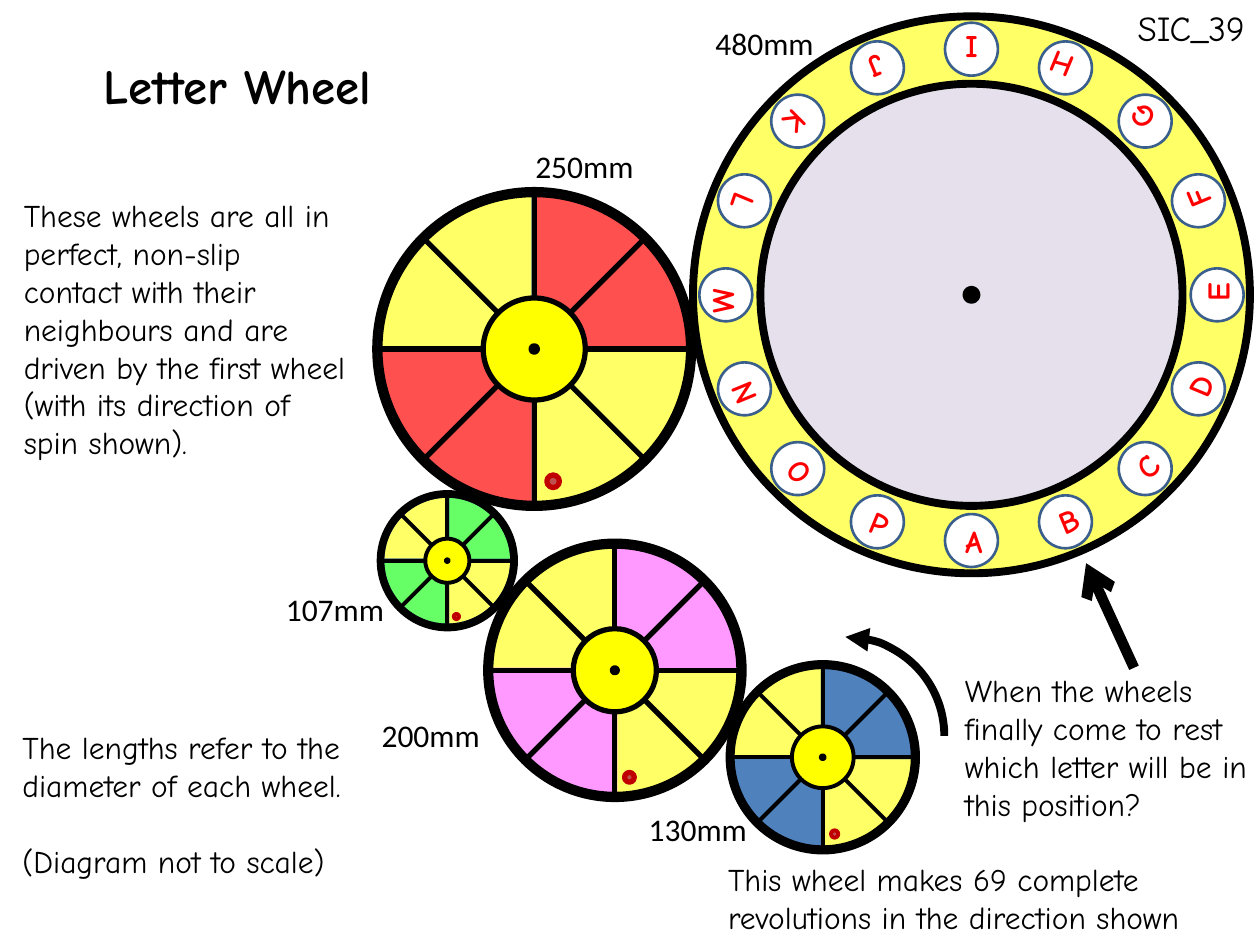
import math
from typing import NamedTuple, Optional

from lxml import etree
from pptx import Presentation
from pptx import util as u
from pptx.dml.color import RGBColor
from pptx.enum import shapes, text
from pptx.oxml import ns

COLS, ROWS = 10, 7.5
CELL = u.Inches(1)  # one square cell of the slide grid

COLORS = {
    "black": "000000", "white": "FFFFFF", "pale": "FFFF66", "yellow": "FFFF00",
    "lilac": "E6E0EC", "navy": "3A5F8C", "letter": "FF0000",
    "blue": "4F81BD", "pink": "FF99FF", "green": "66FF66", "red": "FF5050",
    "dot": "C0504D", "dot_rim": "C00000",
}
HAND, PLAIN = "Comic Neue", "Calibri"
Point = tuple[float, float]


class Ring(NamedTuple):
    size: float
    weight: float


class Wheel(NamedTuple):
    center: Point
    size: float
    hub: float
    dot: Point  # offset from the centre, as shares of the size
    color: str
    edge: Optional[str]  # None: each quarter is edged in its own colour
    weight: float
    rings: tuple[Ring, ...]


class Label(NamedTuple):
    col: float
    row: float
    width: float
    height: float
    lines: tuple[str, ...]
    font: str = HAND
    size: float = 18
    bold: bool = False
    wrap: bool = True


WHEELS_BEFORE_ARC = (
    Wheel((6.53, 6.01), 1.45, 0.49, (0.065, 0.42), "blue", "navy", 2.25,
          (Ring(1.5, 2.25), Ring(1.48, 4.5), Ring(1.44, 3))),
)
WHEELS_AFTER_ARC = (
    Wheel((4.88, 5.32), 1.93, 0.66, (0.06, 0.44), "pink", None, 3,
          (Ring(2.05, 3), Ring(1.99, 3), Ring(1.97, 3))),
    Wheel((3.55, 4.45), 1.03, 0.35, (0.07, 0.43), "green", "navy", 2.25,
          (Ring(1.09, 2.25), Ring(1.06, 2.25), Ring(1.05, 2.25), Ring(1.03, 2.25))),
    Wheel((4.24, 2.77), 2.5, 0.81, (0.06, 0.42), "red", "navy", 3,
          (Ring(2.53, 3), Ring(2.45, 3))),
)


def diameter(col: float, row: float, words: str) -> Label:
    return Label(col, row, 0.99, 0.4, (words,), font=PLAIN, wrap=False)


LABELS = (
    Label(0.72, 0.39, 2.77, 0.57, ("Letter Wheel",), size=28, bold=True, wrap=False),
    Label(5.68, 6.78, 4.16, 0.71,
          ("This wheel makes 69 complete revolutions in the direction shown",)),
    Label(7.56, 5.28, 2.67, 1.31,
          ("When the wheels finally come to rest which letter will be in this position?",)),
    Label(0.09, 1.51, 2.75, 2.52,
          ("These wheels are all in perfect, non-slip contact with their neighbours and "
           "are driven by the first wheel (with its direction of spin shown).",)),
    diameter(5.05, 6.38, "130mm"),
    diameter(2.93, 5.63, "200mm"),
    diameter(2.17, 4.63, "107mm"),
    diameter(4.15, 1.12, "250mm"),
    diameter(5.58, 0.14, "480mm"),
    Label(0.08, 5.73, 3, 1.62,
          ("The lengths refer to the diameter of each wheel.", "(Diagram not to scale)")),
    Label(8.93, 0, 1.07, 0.44, ("SIC_39",), size=20, wrap=False),
)


def cells(n: float) -> int:
    return round(n * CELL)


def rgb(name: str) -> RGBColor:
    return RGBColor.from_string(COLORS[name])


def set_line(sp, color: str, weight: float) -> None:
    sp.line.color.rgb = rgb(color)
    sp.line.width = u.Pt(weight)


def add_arrowhead(sp, end: str, kind: str) -> None:
    """Put an arrowhead at the headEnd (start) or tailEnd (finish) of a line."""
    ln = sp.line._get_or_add_ln()
    etree.SubElement(ln, ns.qn(f"a:{end}"), type=kind)


def add_round(parent, center: Point, size: float, fill: Optional[str], line: str,
              weight: float, kind=shapes.MSO_SHAPE.OVAL):
    """Draw a circular shape around its centre."""
    x, y = center
    sp = parent.add_shape(kind, cells(x - size / 2), cells(y - size / 2),
                          cells(size), cells(size))
    sp.shadow.inherit = False
    if fill:
        sp.fill.solid()
        sp.fill.fore_color.rgb = rgb(fill)
    else:
        sp.fill.background()
    set_line(sp, line, weight)
    return sp


def add_line(parent, start: Point, end: Point, weight: float):
    cn = parent.add_connector(shapes.MSO_CONNECTOR.STRAIGHT,
                              *(cells(n) for n in (*start, *end)))
    set_line(cn, "black", weight)
    etree.SubElement(cn._element.spPr, ns.qn("a:effectLst"))
    return cn


def around(center: Point, radius: float, degrees: float) -> Point:
    """Point on a circle, counted anticlockwise from its bottom."""
    a = math.radians(degrees)
    return center[0] + radius * math.sin(a), center[1] + radius * math.cos(a)


def add_wheel(slide, w: Wheel) -> None:
    parent = slide.shapes.add_group_shape().shapes
    for start, fill in ((0, "pale"), (90, w.color)):
        for turn in (0, 180):
            pie = add_round(parent, w.center, w.size, fill, w.edge or fill, w.weight,
                            shapes.MSO_SHAPE.PIE)
            pie.rotation = turn
            # angles are stored in 60000ths of a degree, adjustments in 100000ths
            pie.adjustments[0] = start * 0.6
            pie.adjustments[1] = (start + 90) * 0.6
    reach = w.rings[0].size / 2
    for angle in range(0, 180, 45):
        add_line(parent, around(w.center, reach, angle),
                 around(w.center, reach, angle + 180), w.weight)
    add_round(parent, w.center, w.hub, "yellow", "black", w.weight)
    add_round(parent, w.center, w.size * 0.02, "black", "black", w.weight)
    for ring in w.rings:
        add_round(parent, w.center, ring.size, None, "black", ring.weight)
    dot = (w.center[0] + w.dot[0] * w.size, w.center[1] + w.dot[1] * w.size)
    add_round(parent, dot, w.size * 0.04, "dot", "dot_rim", w.weight)


def add_letter_wheel(slide, center: Point) -> None:
    parent = slide.shapes.add_group_shape().shapes
    for size, fill in ((4.42, "pale"), (3.35, "lilac"), (0.08, "black")):
        add_round(parent, center, size, fill, "black", 4.5)
    letters = "ABCDEFGHIJKLMNOP"
    step = 360 / len(letters)
    for i, letter in enumerate(letters):
        sp = add_round(parent, around(center, 1.95, i * step), 0.42, "white", "navy", 1.5)
        sp.rotation = -i * step % 360
        tf = sp.text_frame
        tf.vertical_anchor = text.MSO_ANCHOR.MIDDLE
        p = tf.paragraphs[0]
        p.text = letter
        p.alignment = text.PP_ALIGN.CENTER
        set_font(p, HAND, 18, True, "letter")


def set_font(p, name: str, size: float, bold: bool, color: str) -> None:
    p.font.name = name
    p.font.size = u.Pt(size)
    p.font.bold = bold
    p.font.color.rgb = rgb(color)


def add_label(slide, label: Label) -> None:
    tf = slide.shapes.add_textbox(*(cells(n) for n in label[:4])).text_frame
    tf.word_wrap = label.wrap
    tf.auto_size = text.MSO_AUTO_SIZE.SHAPE_TO_FIT_TEXT
    for i, line in enumerate(label.lines):
        p = tf.add_paragraph() if i else tf.paragraphs[0]
        p.text = line
        if i:
            p.space_before = u.Pt(label.size * 1.2)
        set_font(p, label.font, label.size, label.bold, "black")


def main() -> None:
    prs = Presentation()
    prs.slide_width, prs.slide_height = cells(COLS), cells(ROWS)
    slide = prs.slides.add_slide(prs.slide_layouts[6])

    add_letter_wheel(slide, (7.71, 2.34))
    for wheel in WHEELS_BEFORE_ARC:
        add_wheel(slide, wheel)
    spin = add_round(slide.shapes, (6.71, 5.84), 1.57, None, "black", 4.5,
                     shapes.MSO_SHAPE.ARC)
    add_arrowhead(spin, "headEnd", "triangle")
    for wheel in WHEELS_AFTER_ARC:
        add_wheel(slide, wheel)
    pointer = add_line(slide.shapes, (9, 5.3), (8.62, 4.47), 6)
    add_arrowhead(pointer, "tailEnd", "arrow")
    for label in LABELS:
        add_label(slide, label)

    prs.save("out.pptx")


if __name__ == "__main__":
    main()
